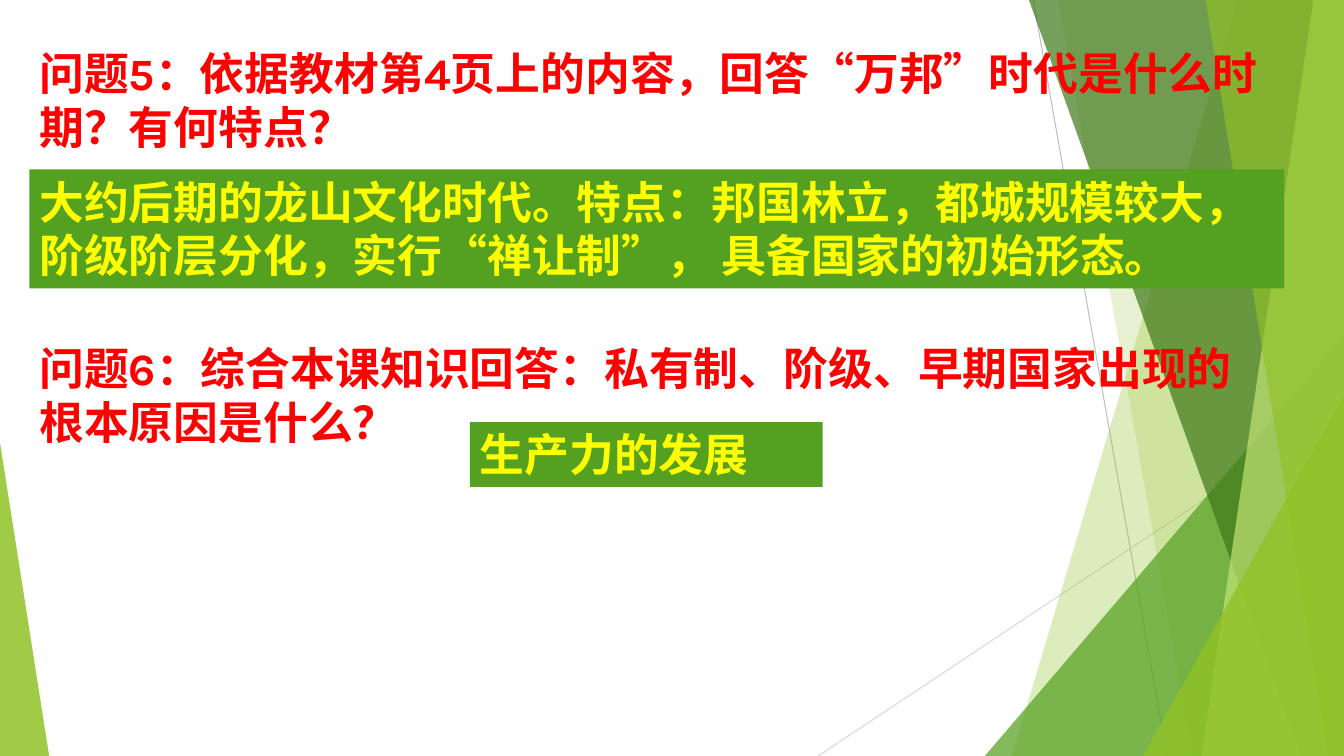
import pptx
import pptx.util
import pptx.dml.color
import pptx.enum.lang
import pptx.enum.shapes
import pptx.enum.text
from lxml import etree
from pptx.util import Cm, Pt

WIDE, HIGH = 33.87, 19.05
LEFT, SPAN, TALL = 0.74, 31.62, 3.0
NS = "{http://schemas.openxmlformats.org/drawingml/2006/main}"
COLORS = {
    "lime": "90C226", "green": "54A021", "dark": "3F7819", "pale": "C0E474",
    "gray": "BFBFBF", "light": "D9D9D9", "red": "FF0000", "yellow": "FFFF00",
}


class Deck:
    font = "Karla"
    size = Pt(32)

    def __init__(self):
        self.show = pptx.Presentation()
        self.show.slide_width, self.show.slide_height = Cm(WIDE), Cm(HIGH)
        self.slide = self.show.slides.add_slide(self.show.slide_layouts[6])
        self.shapes = self.slide.shapes

    def color(self, name):
        return pptx.dml.color.RGBColor.from_string(COLORS[name])

    def paint(self, shape, name, alpha=100):
        """Fill a shape without outline or shadow; alpha is opacity in percent."""
        shape.shadow.inherit = False
        shape.line.fill.background()
        shape.fill.solid()
        shape.fill.fore_color.rgb = self.color(name)
        if alpha < 100:
            tone = shape.fill._xPr.find(f"{NS}solidFill")[0]
            etree.SubElement(tone, f"{NS}alpha", val=str(alpha * 1000))

    def line(self, start, end, name):
        rule = self.shapes.add_connector(
            pptx.enum.shapes.MSO_CONNECTOR.STRAIGHT, *map(Cm, start + end))
        rule.line.width = Pt(0.75)
        rule.line.color.rgb = self.color(name)
        etree.SubElement(rule._element.spPr, f"{NS}effectLst")

    def band(self, top, base, name, alpha):
        """Fill from a slanted left edge to the right side of the slide."""
        form = self.shapes.build_freeform(Cm(top), Cm(0))
        form.add_line_segments(
            [(Cm(x), Cm(y)) for x, y in ((WIDE, 0), (WIDE, HIGH), (base, HIGH))])
        self.paint(form.convert_to_shape(), name, alpha)

    def wedge(self, left, wide, tall, tip, name, alpha):
        """Place a triangle on the bottom edge; tip is 0 for left, 1 for right."""
        shape = self.shapes.add_shape(
            pptx.enum.shapes.MSO_SHAPE.ISOSCELES_TRIANGLE,
            Cm(left), Cm(HIGH - tall), Cm(wide), Cm(tall))
        shape.adjustments[0] = tip
        self.paint(shape, name, alpha)

    def text(self, shape, words, name):
        frame = shape.text_frame
        frame.word_wrap = True
        frame.auto_size = pptx.enum.text.MSO_AUTO_SIZE.SHAPE_TO_FIT_TEXT
        frame.vertical_anchor = pptx.enum.text.MSO_ANCHOR.TOP
        par = frame.paragraphs[0]
        par.text = words
        par.alignment = pptx.enum.text.PP_ALIGN.LEFT
        font = par.font
        font.name, font.size, font.bold = self.font, self.size, True
        font.language_id = pptx.enum.lang.MSO_LANGUAGE_ID.SIMPLIFIED_CHINESE
        font.color.rgb = self.color(name)

    def ask(self, top, words):
        box = self.shapes.add_textbox(Cm(LEFT), Cm(top), Cm(SPAN), Cm(TALL))
        self.text(box, words, "red")

    def reply(self, left, top, wide, tall, words):
        box = self.shapes.add_shape(
            pptx.enum.shapes.MSO_SHAPE.RECTANGLE,
            Cm(left), Cm(top), Cm(wide), Cm(tall))
        self.paint(box, "green")
        self.text(box, words, "yellow")


def main():
    deck = Deck()
    deck.line((26.04, 0), (29.41, HIGH), "gray")
    deck.line((WIDE, 10.24), (20.62, HIGH), "light")
    deck.band(31.19, 25.5, "lime", 30)
    deck.band(26.67, 30.05, "lime", 20)
    deck.wedge(24.82, 9.05, 10.59, 1, "green", 72)
    deck.band(25.93, 32.79, "dark", 70)
    deck.band(33.1, 30.28, "pale", 70)
    deck.band(30.38, 33.48, "lime", 65)
    deck.wedge(28.8, 5.07, 9.07, 1, "lime", 80)
    deck.wedge(0, 1.24, 7.9, 0, "lime", 85)

    deck.ask(1.04, "问题5：依据教材第4页上的内容，回答“万邦”时代是什么时期？有何特点？")
    deck.reply(LEFT, 4.27, SPAN, TALL,
               "大约后期的龙山文化时代。特点：邦国林立，都城规模较大，"
               "阶级阶层分化，实行“禅让制”， 具备国家的初始形态。")
    deck.ask(8.46, "问题6：综合本课知识回答：私有制、阶级、早期国家出现的根本原因是什么？")
    deck.reply(11.84, 10.64, 8.89, 1.63, "生产力的发展")
    deck.show.save("out.pptx")


if __name__ == "__main__":
    main()
